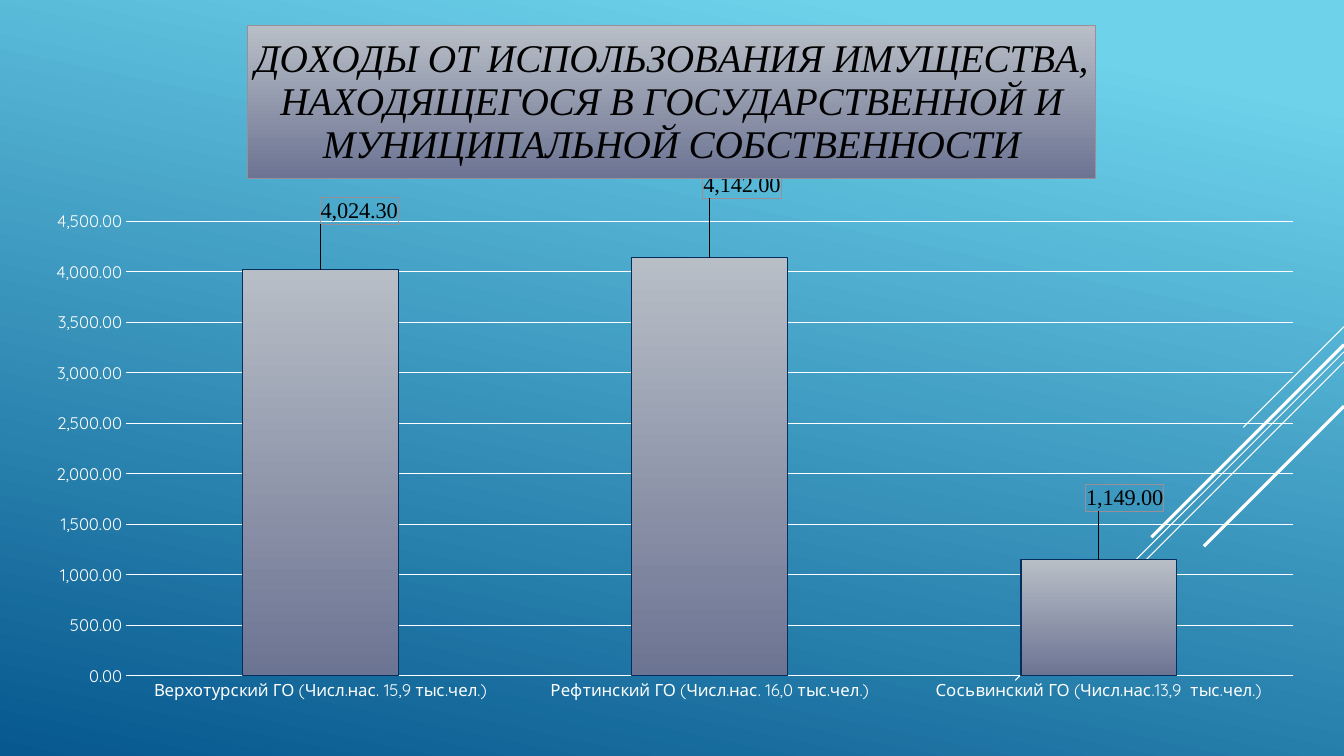
from lxml import etree
from pptx import Presentation
from pptx.chart import data as chart_data
from pptx.dml.color import RGBColor
from pptx.enum import chart as chart_enum
from pptx.oxml import parse_xml
from pptx.oxml import ns
from pptx.util import Inches, Pt

# Content
TITLE = ("ДОХОДЫ ОТ ИСПОЛЬЗОВАНИЯ ИМУЩЕСТВА, НАХОДЯЩЕГОСЯ "
         "В ГОСУДАРСТВЕННОЙ И МУНИЦИПАЛЬНОЙ СОБСТВЕННОСТИ")
INCOME = {
    "Верхотурский ГО (Числ.нас. 15,9 тыс.чел.)": 4024.3,
    "Рефтинский ГО (Числ.нас. 16,0 тыс.чел.)": 4142,
    "Сосьвинский ГО (Числ.нас.13,9  тыс.чел.)": 1149,
}
LABEL_SHIFTS = [(0.03, -0.06), (0.025, -0.08), (0.02, -0.065)]
# Diagonal rays from the right edge: start height, run to the left, width
RAYS = [(3.24, 1.0, 0.75), (3.49, 3.26, 0.75), (3.59, 2.07, 0.75),
        (3.42, 1.91, 2.25), (4.03, 1.39, 2.25)]

WIDTH, HEIGHT = 13.33, 7.5
NUMBER_FORMAT = "#,##0.00"
BODY_FONT, SERIF_FONT = "Quicksand", "Times New Roman"
WHITE = RGBColor(0xFF, 0xFF, 0xFF)
BLACK = RGBColor(0, 0, 0)
NAVY = RGBColor(0x05, 0x2E, 0x5F)
FRAME = RGBColor(0x9A, 0x8F, 0x98)
SKY = [(0.1, RGBColor(0x6E, 0xD2, 0xEB)), (1, RGBColor(0x06, 0x58, 0x8E))]
STEEL = [(0, RGBColor(0xB8, 0xBE, 0xC6)), (1, RGBColor(0x6C, 0x74, 0x93))]


def fill_gradient(fill, stops, clockwise_angle):
    fill.gradient()
    fill.gradient_angle = 360 - clockwise_angle
    for stop, (position, color) in zip(fill.gradient_stops, stops):
        stop.position = position
        stop.color.rgb = color


def style_line(line, color, width):
    line.color.rgb = color
    line.width = Pt(width)


def style_font(font, name, size, color):
    font.name, font.size, font.color.rgb = name, Pt(size), color
    font.bold = False


def set_layout(parent, index, **settings):
    """Place a chart part by fractions of the chart area."""
    for old_layout in parent.findall(ns.qn("c:layout")):
        parent.remove(old_layout)
    layout = parse_xml(f"<c:layout {ns.nsdecls('c')}><c:manualLayout/></c:layout>")
    for tag, value in settings.items():
        etree.SubElement(layout[0], ns.qn(f"c:{tag}")).set("val", str(value))
    parent.insert(index, layout)


presentation = Presentation()
presentation.slide_width, presentation.slide_height = Inches(WIDTH), Inches(HEIGHT)
slide = presentation.slides.add_slide(presentation.slide_layouts[6])
fill_gradient(slide.background.fill, SKY, 102)

# Diagonal rays
for top, run, width in RAYS:
    ray = slide.shapes.add_connector(1, Inches(WIDTH), Inches(top),
                                     Inches(WIDTH - run), Inches(top + run))
    style_line(ray.line, WHITE, width)
    etree.SubElement(ray._element.spPr, ns.qn("a:effectLst"))

# Chart
income_data = chart_data.CategoryChartData(number_format=NUMBER_FORMAT)
income_data.categories = list(INCOME)
income_data.add_series(TITLE, list(INCOME.values()))
chart = slide.shapes.add_chart(
    chart_enum.XL_CHART_TYPE.COLUMN_CLUSTERED,
    Inches(0.31), Inches(0.25), Inches(12.78), Inches(6.85), income_data).chart
chart.has_legend = False
style_font(chart.font, BODY_FONT, 10, WHITE)
plot_area = chart._chartSpace.chart.plotArea
set_layout(plot_area, 0, layoutTarget="inner", xMode="edge", yMode="edge",
           x=0.0736, y=0.2836, w=0.906, h=0.659)

# Chart title
chart.has_title = True
title = chart.chart_title
title_run = title.text_frame.paragraphs[0].add_run()
title_run.text = TITLE
style_font(title_run.font, SERIF_FONT, 28, BLACK)
title_run.font.italic = True
fill_gradient(title.format.fill, STEEL, 90)
style_line(title.format.line, FRAME, 0.75)
set_layout(title._element, 1, xMode="edge", yMode="edge", x=0.168, y=0)

# Axes
for axis in (chart.category_axis, chart.value_axis):
    axis.major_tick_mark = axis.minor_tick_mark = chart_enum.XL_TICK_MARK.NONE
    axis.format.line.fill.background()
    style_font(axis.tick_labels.font, BODY_FONT, 12, WHITE)
value_axis = chart.value_axis
value_axis.minimum_scale, value_axis.maximum_scale = 0, 4500
value_axis.major_unit = 500
value_axis.tick_labels.number_format = NUMBER_FORMAT
value_axis.tick_labels.number_format_is_linked = False
style_line(value_axis.major_gridlines.format.line, WHITE, 0.75)

# Columns
plot = chart.plots[0]
plot.gap_width = 150
plot.vary_by_categories = False
series = plot.series[0]
fill_gradient(series.format.fill, STEEL, 90)
style_line(series.format.line, NAVY, 0.75)

# Framed value labels, shifted from the column tops
labels = series.data_labels
labels.show_value = True
labels.number_format = NUMBER_FORMAT
labels.number_format_is_linked = False
style_font(labels.font, SERIF_FONT, 16, BLACK)
for index in range(len(LABEL_SHIFTS)):
    label = series.points[index].data_label
    style_font(label.font, SERIF_FONT, 16, BLACK)
    label.position = chart_enum.XL_LABEL_POSITION.OUTSIDE_END
for element, (x, y) in zip(plot_area.iter(ns.qn("c:dLbl")), LABEL_SHIFTS):
    for old_frame in element.findall(ns.qn("c:spPr")):
        element.remove(old_frame)
    set_layout(element, 1, x=x, y=y)
    element.insert(2, parse_xml(
        f'<c:numFmt {ns.nsdecls("c")} formatCode="{NUMBER_FORMAT}" sourceLinked="0"/>'))
    element.insert(3, parse_xml(
        f'<c:spPr {ns.nsdecls("c", "a")}><a:noFill/><a:ln w="9525"><a:solidFill>'
        f'<a:srgbClr val="{FRAME}"/></a:solidFill></a:ln></c:spPr>'))

presentation.save("out.pptx")
